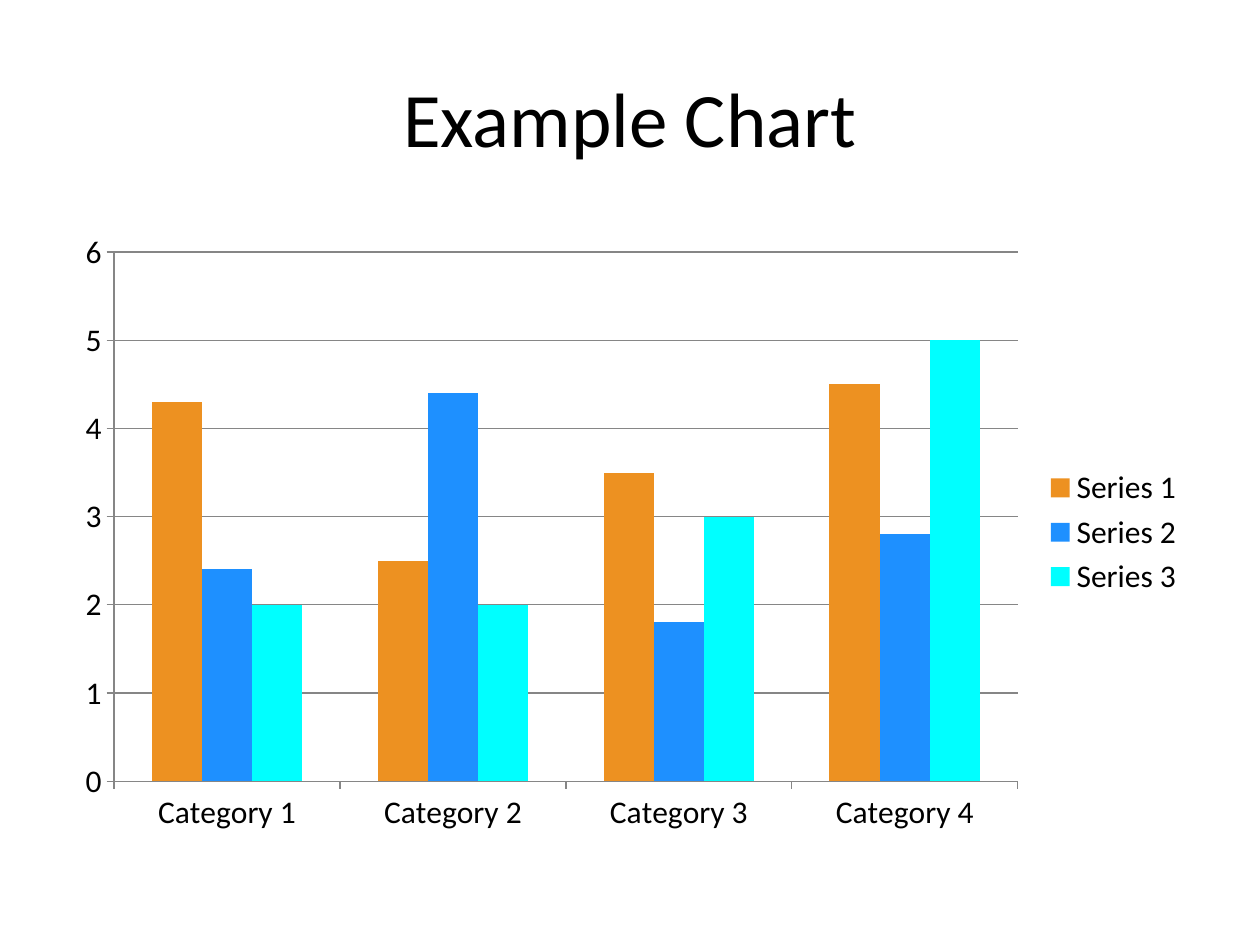
import pptx
import pptx.chart.data
import pptx.dml.color
import pptx.enum.chart
import pptx.enum.text
import pptx.util
from pptx.util import Inches

FONT = "Calibri"
CATEGORIES = ["Category 1", "Category 2", "Category 3", "Category 4"]
SERIES = [
    ("Series 1", [4.3, 2.5, 3.5, 4.5], "ED9121"),
    ("Series 2", [2.4, 4.4, 1.8, 2.8], "1E90FF"),
    ("Series 3", [2, 2, 3, 5], "00FFFF"),
]


def rgb(value):
    """Return the colour for a hex string."""
    return pptx.dml.color.RGBColor.from_string(value)


def style_font(font, size):
    """Set the typeface, size and black colour of a font."""
    font.name = FONT
    font.size = pptx.util.Pt(size)
    font.color.rgb = rgb("000000")


def style_line(line):
    """Give a chart line its thin grey stroke."""
    line.color.rgb = rgb("868686")
    line.width = pptx.util.Pt(0.75)


def add_title(slide, left, top, width, height):
    """Place the centred heading in its box."""
    heading = slide.shapes.add_textbox(left, top, width, height).text_frame
    heading.word_wrap = True
    heading.vertical_anchor = pptx.enum.text.MSO_ANCHOR.MIDDLE
    paragraph = heading.paragraphs[0]
    paragraph.alignment = pptx.enum.text.PP_ALIGN.CENTER
    run = paragraph.add_run()
    run.text = "Example Chart"
    style_font(run.font, 44)


def add_column_chart(slide, left, top, width, height):
    """Place the clustered columns with their axes and legend."""
    data = pptx.chart.data.CategoryChartData()
    data.categories = CATEGORIES
    for name, values, _ in SERIES:
        data.add_series(name, values)
    kind = pptx.enum.chart.XL_CHART_TYPE.COLUMN_CLUSTERED
    chart = slide.shapes.add_chart(kind, left, top, width, height, data).chart
    style_font(chart.font, 18)
    chart.has_title = False
    chart.has_legend = True
    chart.legend.position = pptx.enum.chart.XL_LEGEND_POSITION.RIGHT
    chart.legend.include_in_layout = False

    plot = chart.plots[0]
    plot.gap_width = 150
    plot.overlap = 0
    plot.vary_by_categories = False
    for series, (_, _, color) in zip(plot.series, SERIES):
        series.format.fill.solid()
        series.format.fill.fore_color.rgb = rgb(color)

    for axis in (chart.category_axis, chart.value_axis):
        axis.major_tick_mark = pptx.enum.chart.XL_TICK_MARK.OUTSIDE
        axis.minor_tick_mark = pptx.enum.chart.XL_TICK_MARK.NONE
        style_line(axis.format.line)
    values_axis = chart.value_axis
    values_axis.minimum_scale = 0
    values_axis.maximum_scale = 6
    values_axis.major_unit = 1
    values_axis.has_major_gridlines = True
    style_line(values_axis.major_gridlines.format.line)


def main():
    """Build the slide and save it."""
    deck = pptx.Presentation()
    deck.slide_width, deck.slide_height = Inches(10), Inches(7.5)
    slide = deck.slides.add_slide(deck.slide_layouts[6])
    add_title(slide, Inches(0.5), Inches(0.3), Inches(9), Inches(1.25))
    add_column_chart(slide, Inches(0.5), Inches(1.75), Inches(9), Inches(4.95))
    deck.save("out.pptx")


if __name__ == "__main__":
    main()
